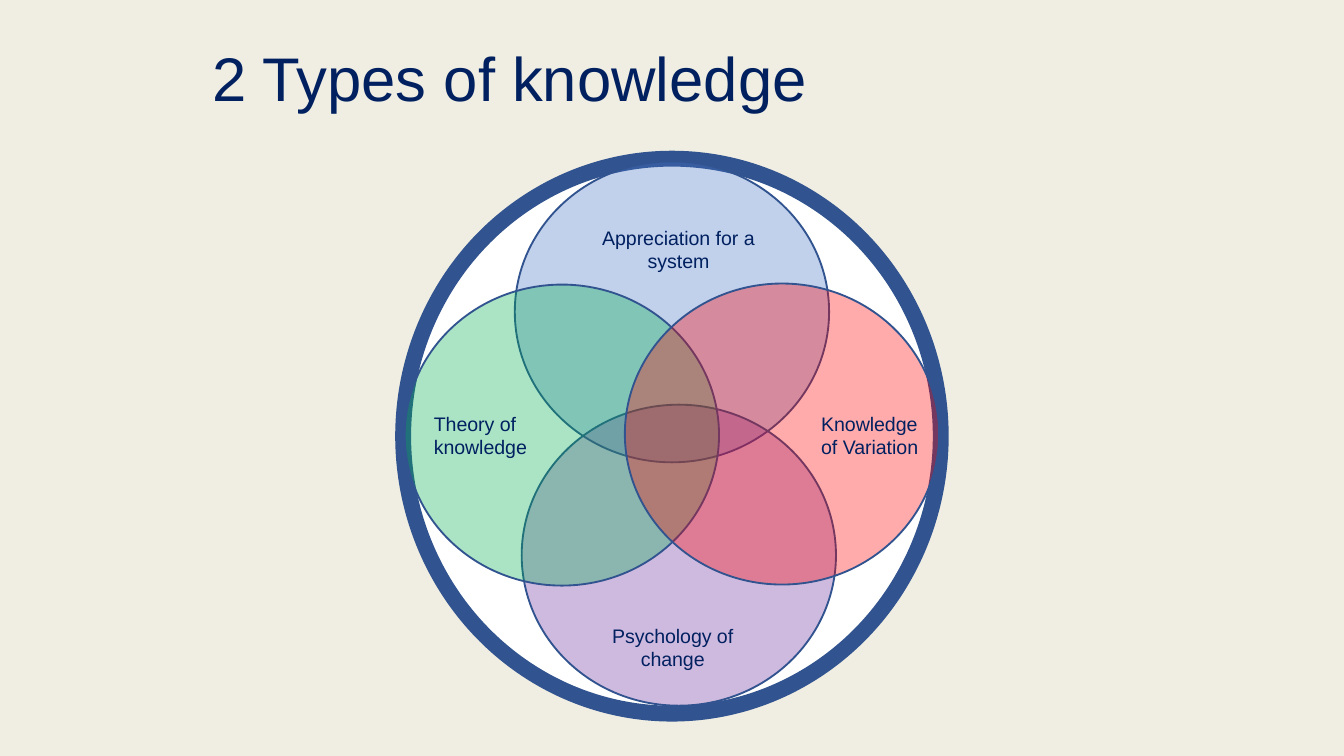
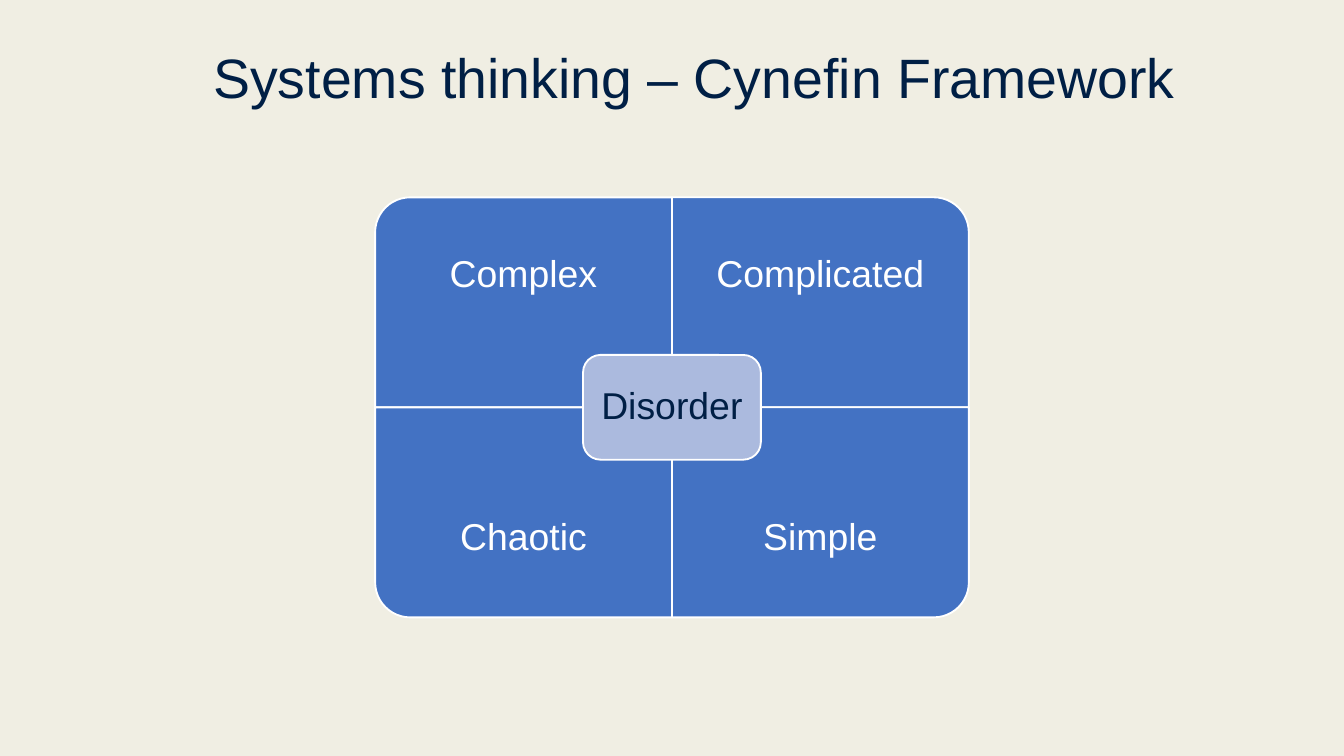
"""Build two slides: a four-circle knowledge diagram and the Cynefin framework."""
from lxml import etree
from pptx import Presentation
from pptx.dml.color import RGBColor
from pptx.enum import shapes, text
from pptx.oxml.ns import qn
from pptx.util import Cm, Pt

FONT = "Arial"
COLORS = {
    "background": "F0EEE3",
    "white": "FFFFFF",
    "navy": "002060",
    "dark": "001F45",
    "outline": "31538F",
    "blue": "4472C4",
    "purple": "7030A0",
    "green": "00B050",
    "red": "FF0000",
    "quadrant": "4372C3",
    "center": "ABBADE",
}
SHAPE = shapes.MSO_SHAPE
ALIGN = text.PP_ALIGN
CIRCLE_SIZE = (5.94, 5.69)
CIRCLES = [
    (9.73, 3.05, "blue"),
    (9.86, 7.65, "purple"),
    (7.65, 5.38, "green"),
    (11.81, 5.36, "red"),
]
CIRCLE_LABELS = [
    ("Appreciation for a system", 10.69, 4.14, 4.27, ALIGN.CENTER),
    ("Psychology of change", 10.9, 11.66, 3.63, ALIGN.CENTER),
    ("Theory of knowledge", 7.95, 7.65, 2.34, ALIGN.LEFT),
    ("Knowledge of Variation", 15.27, 7.65, 2.54, ALIGN.LEFT),
]
QUADRANTS = [
    ("Complex", 0, 0, 270),
    ("Complicated", 1, 0, 0),
    ("Chaotic", 0, 1, 180),
    ("Simple", 1, 1, 90),
]
CENTER_X, CENTER_Y = 12.7, 7.7
QUADRANT_WIDTH, QUADRANT_HEIGHT = 5.61, 3.97
LABEL_HEIGHT = 2.97
CORNER = 0.167


def rgb(name):
    """Return the named palette colour."""
    return RGBColor.from_string(COLORS[name])


def write(shape, words, size, color, align, inset=(0.25, 0.13), spacing=None):
    """Put one formatted paragraph into a shape."""
    frame = shape.text_frame
    frame.text = words
    frame.word_wrap = True
    frame.auto_size = text.MSO_AUTO_SIZE.NONE
    frame.margin_left = frame.margin_right = Cm(inset[0])
    frame.margin_top = frame.margin_bottom = Cm(inset[1])
    paragraph = frame.paragraphs[0]
    paragraph.alignment = align
    paragraph.line_spacing = spacing
    paragraph.font.name = FONT
    paragraph.font.size = Pt(size)
    paragraph.font.color.rgb = rgb(color)
    return frame


def add_title_slide(presentation, words, box, size, color):
    """Add a title-only slide with its title placed and formatted."""
    slide = presentation.slides.add_slide(presentation.slide_layouts[5])
    title = slide.shapes.title
    title.left, title.top, title.width, title.height = map(Cm, box)
    frame = write(title, words, size, color, ALIGN.LEFT, spacing=0.9)
    frame.vertical_anchor = text.MSO_ANCHOR.MIDDLE
    return slide


def add_filled(slide, kind, box, fill, line, width=1, opacity=None):
    """Add a preset shape with a solid fill and outline."""
    shape = slide.shapes.add_shape(kind, *map(Cm, box))
    shape.shadow.inherit = False
    shape.fill.solid()
    shape.fill.fore_color.rgb = rgb(fill)
    shape.line.color.rgb = rgb(line)
    shape.line.width = Pt(width)
    if opacity is not None:
        color = shape.fill._xPr.find(".//" + qn("a:srgbClr"))
        etree.SubElement(color, qn("a:alpha"), val=str(opacity * 1000))
    return shape


def add_label(slide, words, box, size, color, align, **options):
    """Add a text box with one paragraph and return its text frame."""
    label = slide.shapes.add_textbox(*map(Cm, box))
    return write(label, words, size, color, align, **options)


def add_quadrant(slide, words, column, row, rotation):
    """Add one quadrant, its rounded corner turned outwards, and its label."""
    left = CENTER_X + (column - 1) * QUADRANT_WIDTH
    top = CENTER_Y + (row - 1) * QUADRANT_HEIGHT
    width, height = QUADRANT_WIDTH, QUADRANT_HEIGHT
    if rotation % 180:
        width, height = height, width
    box = (left + (QUADRANT_WIDTH - width) / 2,
           top + (QUADRANT_HEIGHT - height) / 2, width, height)
    shape = add_filled(slide, SHAPE.ROUND_1_RECTANGLE, box, "quadrant", "white")
    shape.adjustments[0] = CORNER
    shape.rotation = rotation
    label_top = top + row * (QUADRANT_HEIGHT - LABEL_HEIGHT)
    frame = add_label(slide, words, (left, label_top, QUADRANT_WIDTH, LABEL_HEIGHT),
                      20, "white", ALIGN.CENTER, inset=(0.4, 0.4), spacing=0.9)
    frame.vertical_anchor = text.MSO_ANCHOR.MIDDLE


def build_knowledge(presentation):
    """Build the slide with four overlapping circles in a ring."""
    slide = add_title_slide(presentation, "2 Types of knowledge",
                            (3.76, 0.71, 18.54, 1.65), 33, "navy")
    add_filled(slide, SHAPE.OVAL, (7.62, 3, 10.16, 10.49), "white", "outline", 8.5)
    for left, top, fill in CIRCLES:
        add_filled(slide, SHAPE.OVAL, (left, top, *CIRCLE_SIZE), fill, "outline",
                   opacity=33)
    for words, left, top, width, align in CIRCLE_LABELS:
        add_label(slide, words, (left, top, width, 1.14), 10.5, "navy", align)


def build_cynefin(presentation):
    """Build the slide with four quadrants around a centre box."""
    slide = add_title_slide(presentation, "Systems thinking – Cynefin Framework",
                            (3.78, 0.69, 18.97, 1.65), 29.7, "dark")
    for quadrant in QUADRANTS:
        add_quadrant(slide, *quadrant)
    width, height = 3.36, 1.98
    box = (CENTER_X - width / 2, CENTER_Y - height / 2, width, height)
    center = add_filled(slide, SHAPE.ROUNDED_RECTANGLE, box, "center", "white")
    center.adjustments[0] = CORNER
    frame = write(center, "Disorder", 20, "dark", ALIGN.CENTER, inset=(0.2, 0.2),
                  spacing=0.9)
    frame.vertical_anchor = text.MSO_ANCHOR.MIDDLE


def main():
    """Create and save the presentation."""
    presentation = Presentation()
    presentation.slide_width, presentation.slide_height = Cm(25.4), Cm(14.29)
    background = presentation.slide_master.background.fill
    background.solid()
    background.fore_color.rgb = rgb("background")
    build_knowledge(presentation)
    build_cynefin(presentation)
    presentation.save("out.pptx")


if __name__ == "__main__":
    main()
